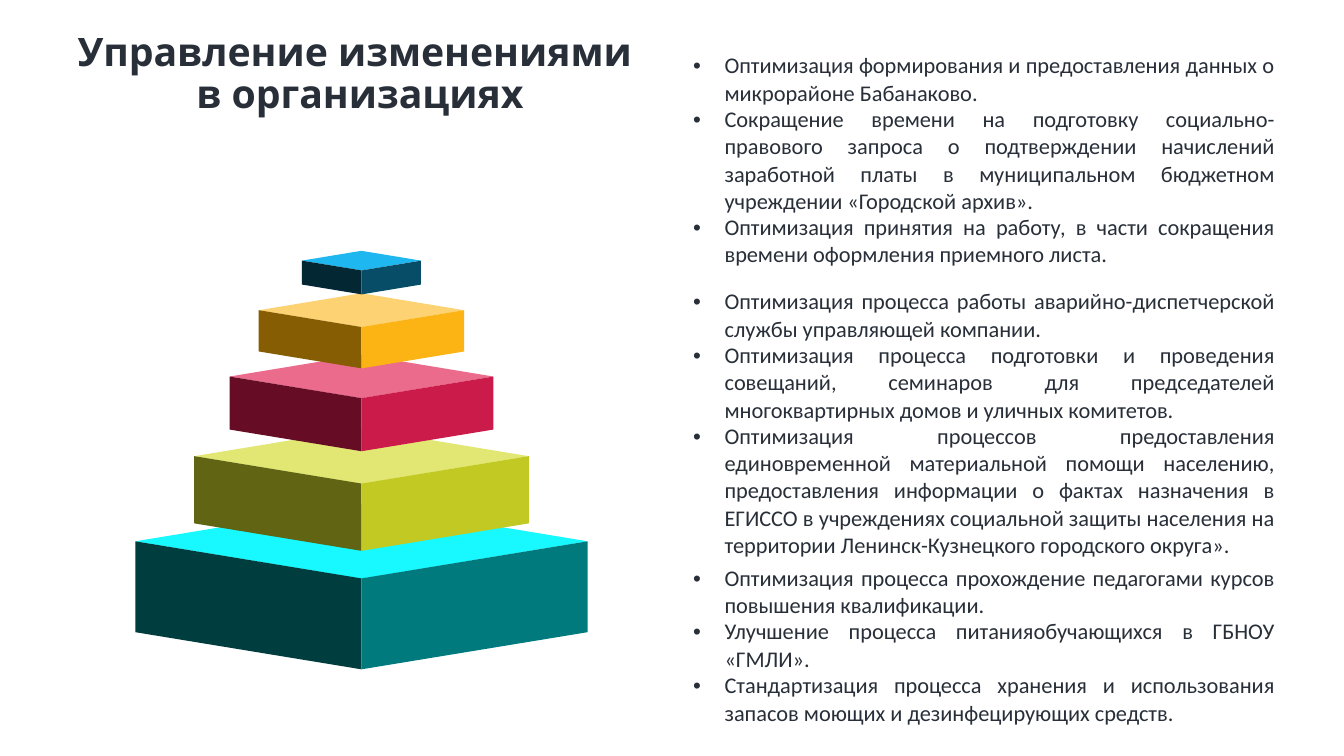
from lxml import etree
from pptx import Presentation
from pptx.enum import shapes, text
from pptx.oxml import ns
from pptx.util import Cm, Pt
from pptx.dml.color import RGBColor

HUES = {
    "ink": "282F39",
    "teal": ("18F9FF", "003D3E", "007A7D"),
    "lime": ("E2E773", "616412", "C2C923"),
    "rose": ("EB6B8D", "660D25", "CB1B4A"),
    "gold": ("FDD272", "865D02", "FCB414"),
    "blue": ("1EB7F0", "042734", "074D67"),
}

# Pyramid tiers from the bottom up: hue, top and width in cm
TIERS = [
    ("teal", 12.7, 11.4),
    ("lime", 10.8, 8.43),
    ("rose", 8.94, 6.65),
    ("gold", 7.39, 5.18),
    ("blue", 6.32, 3.0),
]

TITLE = ["Управление изменениями ", "в организациях"]

# Projects: row height in cm and wording
GOALS = [
    (1.35, "Оптимизация формирования и предоставления данных о микрорайоне Бабанаково."),
    (2.39, "Сокращение времени на подготовку социально-правового запроса о подтверждении "
           "начислений заработной платы в муниципальном бюджетном учреждении «Городской архив»."),
    (1.88, "Оптимизация принятия на работу, в части сокращения времени оформления приемного листа."),
    (1.19, "Оптимизация процесса работы аварийно-диспетчерской службы управляющей компании."),
    (1.8, "Оптимизация процесса подготовки и проведения совещаний, семинаров для председателей "
          "многоквартирных домов и уличных комитетов."),
    (3.58, "Оптимизация процессов предоставления единовременной материальной помощи населению, "
           "предоставления информации о фактах назначения в ЕГИССО в учреждениях социальной "
           "защиты населения на территории Ленинск-Кузнецкого городского округа»."),
    (1.19, "Оптимизация процесса прохождение педагогами курсов повышения квалификации."),
    (1.19, "Улучшение процесса питанияобучающихся в ГБНОУ «ГМЛИ»."),
    (1.19, "Стандартизация процесса хранения и использования запасов моющих и дезинфецирующих средств."),
]


class Deck:
    def __init__(self, slide):
        self.slide = slide

    def font(self, para, name, size, bold=False):
        font = para.font
        font.name, font.size, font.bold = name, Pt(size), bold
        font.color.rgb = RGBColor.from_string(HUES["ink"])

    def title(self, lines, left, top, width, height):
        box = self.slide.shapes.add_textbox(Cm(left), Cm(top), Cm(width), Cm(height))
        frame = box.text_frame
        frame.word_wrap = True
        frame.auto_size = text.MSO_AUTO_SIZE.SHAPE_TO_FIT_TEXT
        frame.text = "\n".join(lines)
        for para in frame.paragraphs:
            para.alignment = text.PP_ALIGN.CENTER
            para.line_spacing = 0.9
            self.font(para, "Open Sans", 28, True)

    def face(self, group, kind, mid_x, mid_y, width, height, hue):
        shape = group.shapes.add_shape(
            kind, Cm(mid_x - width / 2), Cm(mid_y - height / 2), Cm(width), Cm(height))
        shape.shadow.inherit = False
        shape.fill.solid()
        shape.fill.fore_color.rgb = RGBColor.from_string(hue)
        shape.line.fill.background()
        return shape

    def tier(self, mid_x, top, width, hues):
        group = self.slide.shapes.add_group_shape()
        lid, left, right = hues
        depth, tall = 0.165 * width, 0.283 * width
        mid_y = top + depth / 2
        self.face(group, shapes.MSO_SHAPE.FLOWCHART_DECISION, mid_x, mid_y, width, depth, lid)
        for side, hue in ((-1, left), (1, right)):
            wall = self.face(group, shapes.MSO_SHAPE.PARALLELOGRAM, mid_x + side * width / 4,
                             mid_y + tall / 2, tall, width / 2, hue)
            wall.adjustments[0] = 0.29
            wall.rotation = 90
            if side > 0:
                wall.element.spPr.find(ns.qn("a:xfrm")).set("flipV", "1")

    def bullet(self, para, indent):
        props = para._p.get_or_add_pPr()
        props.set("marL", str(Cm(indent)))
        props.set("indent", str(-Cm(indent)))
        etree.SubElement(props, ns.qn("a:buFont")).set("typeface", "Arial")
        etree.SubElement(props, ns.qn("a:buChar")).set("char", "•")

    def table(self, rows, left, top, width):
        total = sum(height for height, _ in rows)
        grid = self.slide.shapes.add_table(
            len(rows), 1, Cm(left), Cm(top), Cm(width), Cm(total)).table
        grid.first_row = grid.horz_banding = False
        for row, (height, words) in zip(grid.rows, rows):
            row.height = Cm(height)
            cell = row.cells[0]
            cell.fill.background()
            cell.margin_left = cell.margin_right = Cm(0.15)
            cell.margin_top = cell.margin_bottom = 0
            cell.text = words
            para = cell.text_frame.paragraphs[0]
            para.alignment = text.PP_ALIGN.JUSTIFY
            self.bullet(para, 0.79)
            self.font(para, "Calibri", 16)


def main():
    show = Presentation()
    show.slide_width, show.slide_height = Cm(33.87), Cm(19.05)
    deck = Deck(show.slides.add_slide(show.slide_layouts[6]))

    # Heading
    deck.title(TITLE, 1.27, 0.69, 15.6, 2.64)

    # Pyramid
    for hue, top, width in TIERS:
        deck.tier(9.11, top, width, HUES[hue])

    # List of projects
    deck.table(GOALS, 17.32, 1.32, 14.96)

    show.save("out.pptx")


if __name__ == "__main__":
    main()
